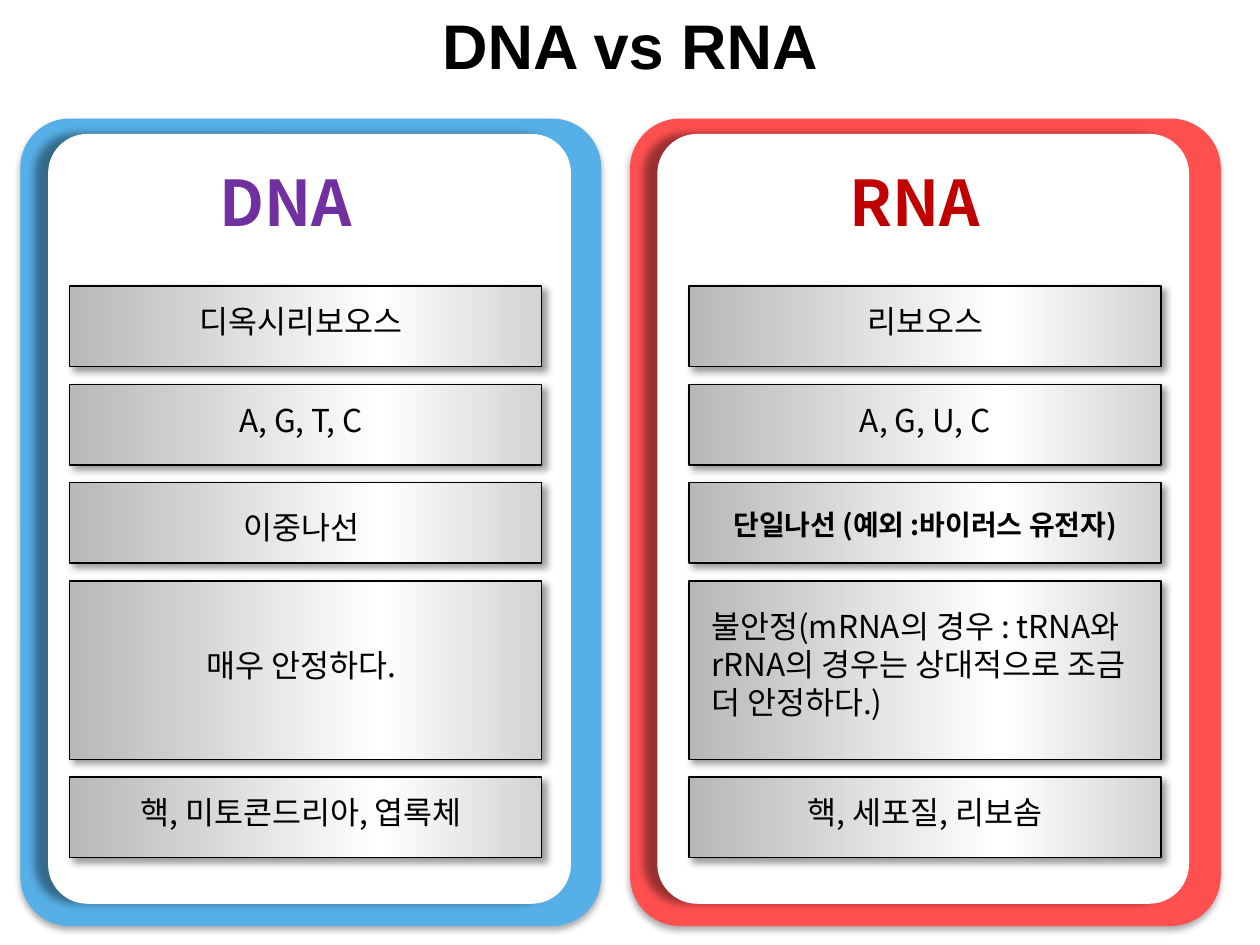
"""Build a slide that compares DNA and RNA in two cards."""
from copy import deepcopy

from pptx import Presentation
from pptx import util as u
from pptx.dml.color import RGBColor
from pptx.enum import shapes, text
from pptx.oxml import parse_xml
from pptx.oxml.ns import nsdecls, qn

HUES = {
    "black": "000000", "white": "FFFFFF", "blue": "56AFE6", "red": "FF5050",
    "violet": "7030A0", "crimson": "C00000", "light": "D3D3D3", "dark": "B8B8B8",
}
SANS = "Noto Sans CJK KR"
TOP, PITCH, GAP = 5.77, 1.98, 0.36
ROWS = [(0, 1), (1, 1), (2, 1), (3, 2), (5, 1)]
CARDS = [
    {
        "name": "DNA", "ink": "violet", "hue": "blue", "head": 4.17,
        "outer": (0.41, 11.71), "inner": (0.97, 10.54), "bar": 1.4, "wide": 8.94,
        "facts": [
            ("디옥시리보오스", 0.19, {}),
            ("A, G, T, C", 0.2, {}),
            ("이중나선", 0.38, {}),
            ("매우 안정하다.", 1.19, {}),
            ("핵, 미토콘드리아, 엽록체", 0.2, {}),
        ],
    },
    {
        "name": "RNA", "ink": "crimson", "hue": "red", "head": 16.87,
        "outer": (12.7, 11.91), "inner": (13.25, 10.72), "bar": 13.89, "wide": 9.12,
        "facts": [
            ("리보오스", 0.19, {}),
            ("A, G, U, C", 0.2, {}),
            ("단일나선 (예외 :바이러스 유전자)", 0.38, {"size": 16, "bold": True}),
            ("불안정(mRNA의 경우 : tRNA와 rRNA의 경우는 상대적으로 조금 더 안정하다.)",
             0.41, {"align": "LEFT", "high": 2.57}),
            ("핵, 세포질, 리보솜", 0.2, {}),
        ],
    },
]


def tint(name):
    """Return the named colour."""
    return RGBColor.from_string(HUES[name])


def shade(shape, alpha, blur, dist, angle):
    """Give a shape an outer shadow."""
    shape.shadow.inherit = False
    shape._element.spPr.find(qn("a:effectLst")).append(parse_xml(
        f'<a:outerShdw {nsdecls("a")} blurRad="{u.Pt(blur)}" dist="{u.Pt(dist)}" '
        f'dir="{angle * 60000}" algn="ctr" rotWithShape="0">'
        f'<a:srgbClr val="{HUES["black"]}"><a:alpha val="{alpha * 1000}"/></a:srgbClr>'
        f'</a:outerShdw>'))


def panel(slide, span, top, high, adj, hue, shadow):
    """Draw a rounded panel that stands on its short side."""
    left, wide = span
    shift = (high - wide) / 2
    shape = slide.shapes.add_shape(
        shapes.MSO_SHAPE.ROUNDED_RECTANGLE, u.Cm(left - shift), u.Cm(top + shift),
        u.Cm(high), u.Cm(wide))
    shape.rotation = 90
    shape.adjustments[0] = adj
    shape.fill.solid()
    shape.fill.fore_color.rgb = tint(hue)
    shape.line.fill.background()
    shade(shape, *shadow)


def bar(slide, left, top, high):
    """Draw a silver bar with a thin black edge."""
    shape = slide.shapes.add_shape(
        shapes.MSO_SHAPE.RECTANGLE, u.Cm(left), u.Cm(top), u.Cm(9.52), u.Cm(high))
    shape.fill.gradient()
    shape.fill.gradient_angle = 180
    first = shape._element.spPr.find(qn("a:gradFill")).find(qn("a:gsLst"))[0]
    first.addnext(deepcopy(first))
    stops = [(0, "light"), (0.34, "white"), (1, "dark")]
    for stop, (place, hue) in zip(shape.fill.gradient_stops, stops):
        stop.position = place
        stop.color.rgb = tint(hue)
    shape.line.color.rgb = tint("black")
    shape.line.width = u.Pt(1)
    shade(shape, 40, 4, 3, 45)


def label(slide, words, left, top, wide, high=1.02, size=18, bold=False,
          ink="black", face=SANS, align="CENTER"):
    """Place one paragraph of text."""
    box = slide.shapes.add_textbox(u.Cm(left), u.Cm(top), u.Cm(wide), u.Cm(high))
    frame = box.text_frame
    frame.text = words
    frame.word_wrap = True
    frame.auto_size = text.MSO_AUTO_SIZE.SHAPE_TO_FIT_TEXT
    line = frame.paragraphs[0]
    line.alignment = getattr(text.PP_ALIGN, align)
    for run in line.runs:
        run.font.size = u.Pt(size)
        run.font.bold = bold
        run.font.color.rgb = tint(ink)
        run.font.name = face
        run.font._element.find(qn("a:latin")).addnext(
            parse_xml(f'<a:ea {nsdecls("a")} typeface="{face}"/>'))


def column(slide, card):
    """Draw a card with its heading and facts."""
    panel(slide, card["outer"], 2.39, 16.28, 0.085, card["hue"], (32, 3.5, 2.2, 90))
    panel(slide, card["inner"], 2.7, 15.52, 0.075, "white", (40, 5, 7.5, 180))
    label(slide, card["name"], card["head"], 3.18, 3.38, 1.8, 36, True,
          card["ink"], align="LEFT")
    for (slot, span), (words, drop, style) in zip(ROWS, card["facts"]):
        top = TOP + slot * PITCH
        bar(slide, card["bar"], top, span * PITCH - GAP)
        label(slide, words, card["bar"] + 0.2, top + drop, card["wide"], **style)


def main():
    """Build and save the slide."""
    deck = Presentation()
    deck.slide_width, deck.slide_height = u.Cm(25.4), u.Cm(19.05)
    slide = deck.slides.add_slide(deck.slide_layouts[6])
    label(slide, "DNA vs RNA", 0, 0, 25.4, 1.8, 36, True, face="Arial")
    for card in CARDS:
        column(slide, card)
    deck.save("out.pptx")


if __name__ == "__main__":
    main()
